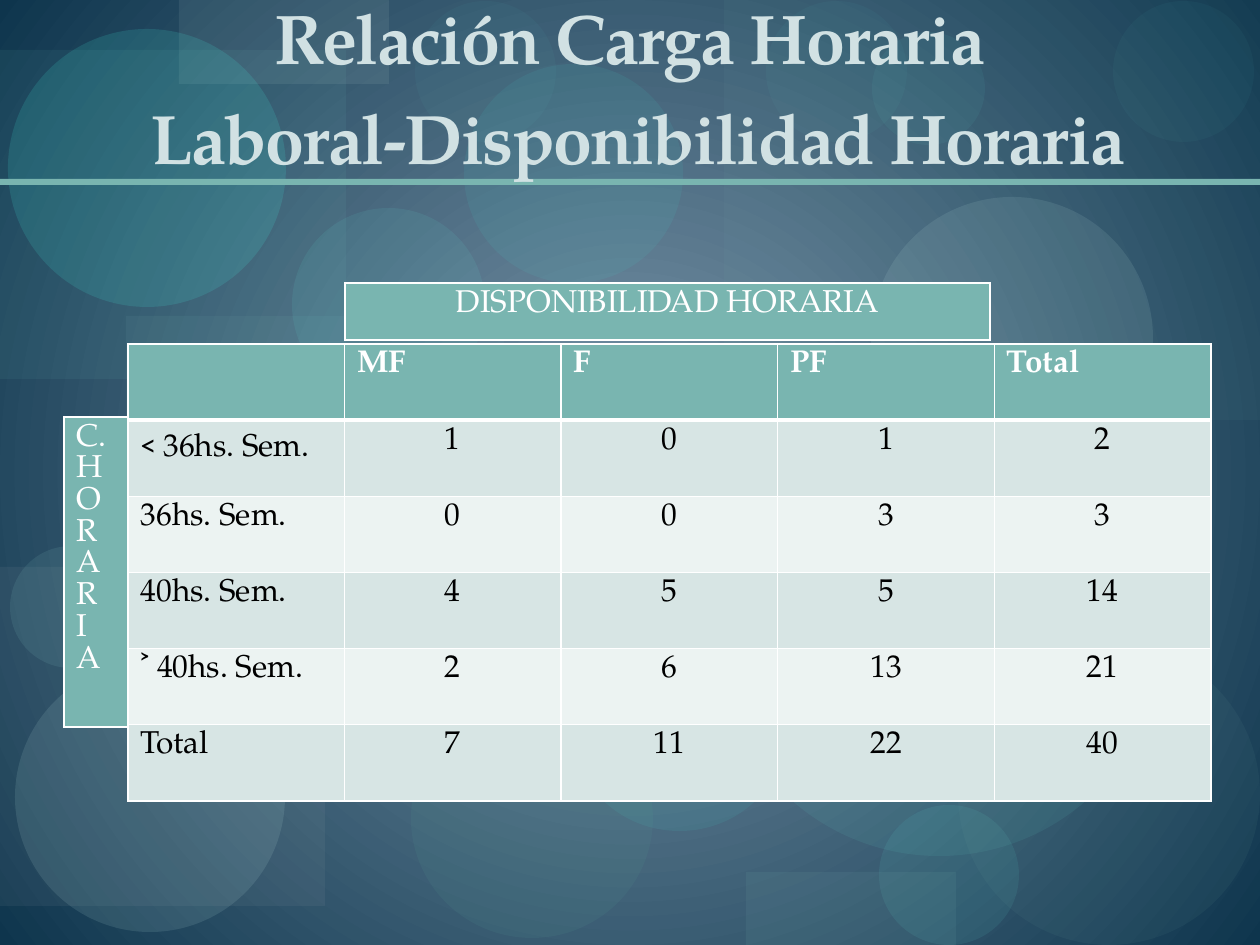
from dataclasses import dataclass
from typing import NamedTuple

from lxml.etree import SubElement
from pptx import Presentation
from pptx.dml.color import RGBColor
from pptx.enum.shapes import MSO_SHAPE
from pptx.enum.text import MSO_ANCHOR, MSO_AUTO_SIZE, PP_ALIGN
from pptx.oxml.ns import qn
from pptx.slide import Slide
from pptx.table import Table, _Cell
from pptx.text.text import _Paragraph
from pptx.util import Emu, Pt

PX_PER_INCH = 126


@dataclass(frozen=True)
class Theme:
    serif: str = "TeX Gyre Pagella"
    sans: str = "Calibri"
    title_size: int = 40
    table_size: int = 18
    glow: str = "7B96AA"
    night: str = "0E354D"
    title: str = "D1E1E3"
    accent: str = "79B5B0"
    band_dark: str = "D7E5E4"
    band_light: str = "ECF3F2"
    white: str = "FFFFFF"
    black: str = "000000"


THEME = Theme()
RECT, OVAL = MSO_SHAPE.RECTANGLE, MSO_SHAPE.OVAL


class Decoration(NamedTuple):
    outline: MSO_SHAPE
    left: int
    top: int
    width: int
    height: int
    color: str
    opacity: int = 100


DECORATIONS = [
    Decoration(RECT, 126, 316, 378, 294, "79B5B0", 9),
    Decoration(OVAL, 411, 699, 242, 239, "549791", 13),
    Decoration(RECT, 724, 0, 536, 420, "79B5B0", 6),
    Decoration(RECT, 0, 567, 325, 339, "B2B7BA", 8),
    Decoration(OVAL, 576, 329, 300, 300, "70A39E", 8),
    Decoration(OVAL, 879, 805, 140, 140, "65E8DC", 9),
    Decoration(OVAL, 871, 197, 282, 282, "C1E8E4", 11),
    Decoration(OVAL, 15, 662, 270, 270, "C1E8E4", 12),
    Decoration(OVAL, 278, 631, 141, 141, "65E8DC", 9),
    Decoration(OVAL, 575, 638, 209, 193, "44EADC", 8),
    Decoration(RECT, 0, 50, 346, 329, "77D6CE", 7),
    Decoration(RECT, 179, 0, 210, 84, "BED7D4", 10),
    Decoration(OVAL, 8, 29, 278, 278, "44EADC", 15),
    Decoration(OVAL, 10, 546, 122, 122, "97DCD6", 10),
    Decoration(OVAL, 292, 208, 193, 193, "65E8DC", 9),
    Decoration(OVAL, 464, 64, 219, 219, "44EADC", 8),
    Decoration(OVAL, 716, 410, 446, 446, "61CDC4", 10),
    Decoration(OVAL, 766, 1, 141, 141, "65E8DC", 4),
    Decoration(OVAL, 958, 643, 302, 302, "70A39E", 8),
    Decoration(OVAL, 220, 510, 165, 165, "97DCD6", 10),
    Decoration(OVAL, 872, 32, 113, 113, "65E8DC", 6),
    Decoration(OVAL, 1113, 1, 141, 141, "65E8DC", 4),
    Decoration(RECT, 746, 872, 210, 73, "79B5B0", 10),
    Decoration(OVAL, 415, 1, 141, 141, "65E8DC", 4),
    Decoration(RECT, 0, 179, 1260, 6, THEME.accent),
]

HEADINGS = ["", "MF", "F", "PF", "Total"]
WORKLOADS = [
    ["˂ 36hs. Sem.", "1", "0", "1", "2"],
    ["36hs. Sem.", "0", "0", "3", "3"],
    ["40hs. Sem.", "4", "5", "5", "14"],
    ["˃ 40hs. Sem.", "2", "6", "13", "21"],
    ["Total", "7", "11", "22", "40"],
]


def px(length: int) -> Emu:
    return Emu(round(length * 914400 / PX_PER_INCH))


def style(paragraph: _Paragraph, size: int, color: str, bold: bool = False,
          align: PP_ALIGN = PP_ALIGN.LEFT) -> None:
    paragraph.alignment = align
    font = paragraph.font
    font.name, font.size, font.bold = THEME.serif, Pt(size), bold
    font.color.rgb = RGBColor.from_string(color)


def paint_background(slide: Slide) -> None:
    fill = slide.background.fill
    fill.gradient()
    for stop, color in zip(fill.gradient_stops, (THEME.glow, THEME.night)):
        stop.color.rgb = RGBColor.from_string(color)
    for stop, position in zip(fill.gradient_stops, (0, 1)):
        stop.position = position
    gradient = slide.background._cSld.find(".//" + qn("a:gradFill"))
    gradient.remove(gradient.find(qn("a:lin")))
    circle = SubElement(gradient, qn("a:path"), {"path": "circle"})
    SubElement(circle, qn("a:fillToRect"), dict.fromkeys("ltrb", "50000"))


def draw_decoration(slide: Slide, item: Decoration) -> None:
    shape = slide.shapes.add_shape(item.outline, px(item.left), px(item.top),
                                   px(item.width), px(item.height))
    shape.shadow.inherit = False
    shape.line.fill.background()
    shape.fill.solid()
    shape.fill.fore_color.rgb = RGBColor.from_string(item.color)
    if item.opacity < 100:
        color = shape._element.spPr.find(".//" + qn("a:srgbClr"))
        SubElement(color, qn("a:alpha"), val=str(item.opacity * 1000))


def write_title(slide: Slide) -> None:
    title = slide.shapes.title
    slide.shapes._spTree.append(title._element)  # in front of the decorations
    title.left, title.top, title.width, title.height = map(px, (63, 21, 1134, 158))
    frame = title.text_frame
    frame.text = "Relación Carga Horaria\v Laboral-Disponibilidad Horaria"
    frame.auto_size = MSO_AUTO_SIZE.NONE
    frame.vertical_anchor = MSO_ANCHOR.BOTTOM
    frame.margin_top = frame.margin_bottom = 0
    heading = frame.paragraphs[0]
    heading.line_spacing = 1.2
    style(heading, THEME.title_size, THEME.title, True, PP_ALIGN.CENTER)
    heading._p.find(".//" + qn("a:defRPr")).set("spc", "-100")


def add_grid(slide: Slide, rows: int, columns: int, left: int, top: int,
             width: int, height: int) -> Table:
    """Add a table of equal cells without a banded style."""
    table = slide.shapes.add_table(rows, columns, px(left), px(top),
                                   px(width), px(height)).table
    table.first_row = table.horz_banding = False
    for column in table.columns:
        column.width = px(width) // columns
    for row in table.rows:
        row.height = px(height) // rows
    return table


def fill_cell(cell: _Cell, text: str, fill: str, color: str, bold: bool = False,
              align: PP_ALIGN = PP_ALIGN.LEFT, top_line: int = 1,
              bottom_line: int = 1) -> None:
    cell.text = text
    for paragraph in cell.text_frame.paragraphs:
        style(paragraph, THEME.table_size, color, bold, align)
    cell.fill.solid()
    cell.fill.fore_color.rgb = RGBColor.from_string(fill)
    properties = cell._tc.get_or_add_tcPr()
    widths = {"L": 1, "R": 1, "T": top_line, "B": bottom_line}
    for index, (side, width) in enumerate(widths.items()):
        border = SubElement(properties, qn(f"a:ln{side}"), w=str(Pt(width)))
        SubElement(SubElement(border, qn("a:solidFill")), qn("a:srgbClr"),
                   val=THEME.white)
        properties.insert(index, border)


def draw_workload_table(slide: Slide) -> None:
    table = add_grid(slide, len(WORKLOADS) + 1, len(HEADINGS), 128, 344, 1083, 457)
    for column, heading in enumerate(HEADINGS):
        fill_cell(table.cell(0, column), heading, THEME.accent, THEME.white,
                  bold=True, bottom_line=3)
    for row, values in enumerate(WORKLOADS, start=1):
        band = THEME.band_dark if row % 2 else THEME.band_light
        for column, value in enumerate(values):
            fill_cell(table.cell(row, column), value, band, THEME.black,
                      align=PP_ALIGN.CENTER if column else PP_ALIGN.LEFT,
                      top_line=3 if row == 1 else 1)

    below_36 = table.cell(1, 0).text_frame.paragraphs[0]
    sign, hours = below_36.runs[0], below_36.add_run()
    sign.text, hours.text = "˂ ", "36hs. Sem."
    sign.font.name = THEME.sans


def main() -> None:
    deck = Presentation()
    deck.slide_width, deck.slide_height = px(1260), px(945)
    slide = deck.slides.add_slide(deck.slide_layouts[5])
    paint_background(slide)
    for item in DECORATIONS:
        draw_decoration(slide, item)
    write_title(slide)
    draw_workload_table(slide)
    availability = add_grid(slide, 1, 1, 345, 283, 645, 57)
    fill_cell(availability.cell(0, 0), "DISPONIBILIDAD HORARIA", THEME.accent,
              THEME.white, align=PP_ALIGN.CENTER)
    workload = add_grid(slide, 1, 1, 64, 417, 64, 310)
    fill_cell(workload.cell(0, 0), "C.\nHORAR\nI\nA", THEME.accent, THEME.white)
    deck.save("out.pptx")


if __name__ == "__main__":
    main()
